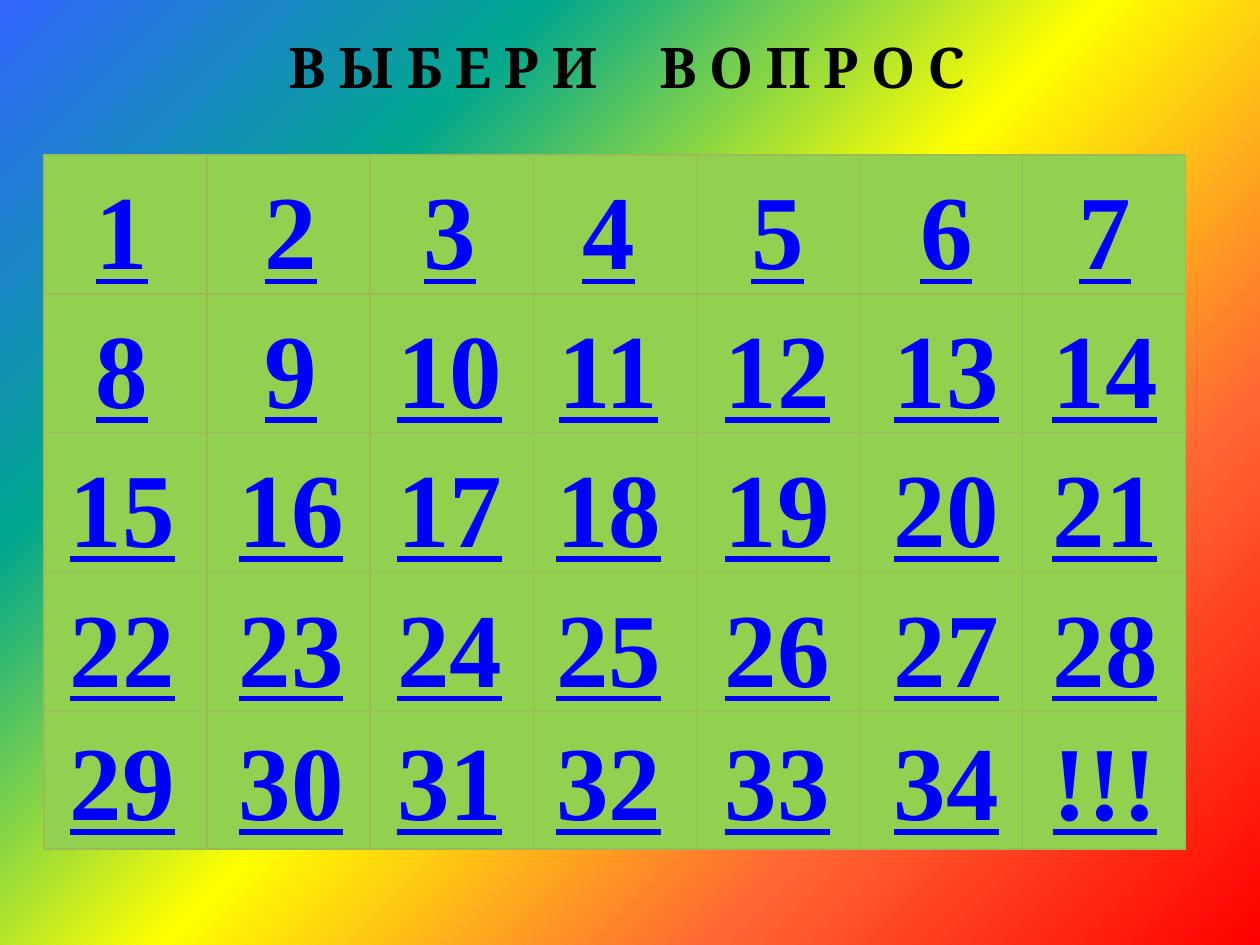
from dataclasses import dataclass

from pptx import Presentation
from pptx import oxml
from pptx import util as u
from pptx.dml.color import RGBColor
from pptx.enum import text
from pptx.oxml.ns import nsdecls


@dataclass(frozen=True)
class Theme:
    title_font: str = "Cambria"
    number_font: str = "Times New Roman"
    title_size: int = 32
    number_size: int = 60
    title_color: str = "000000"
    number_color: str = "0000FF"
    cell_fill: str = "92D050"
    cell_border: str = "9BBB59"
    border_width: int = 1
    background: tuple = ("FF0000", "FF6633", "FFFF00", "01A78F", "3366FF")


THEME = Theme()
COLUMNS, ROWS = 7, 5
QUESTIONS = [str(number) for number in range(1, COLUMNS * ROWS)] + ["!!!"]
COLUMN_CENTRES = (0.97, 2.31, 3.57, 4.83, 6.17, 7.51, 8.77)
ROW_TOPS = (1.26, 2.36, 3.46, 4.57, 5.63)
NUMBER_HEIGHT = 1.11
ONE_DIGIT_WIDTH, WIDE_WIDTH = 0.62, 1.04


def paint_background(slide):
    """Spread the rainbow in even steps from the bottom right corner."""
    step = 100000 // (len(THEME.background) - 1)
    stops = "".join(
        f'<a:gs pos="{index * step}"><a:srgbClr val="{color}"/></a:gs>'
        for index, color in enumerate(THEME.background)
    )
    background = oxml.parse_xml(
        f'<p:bg {nsdecls("p", "a")}><p:bgPr><a:gradFill rotWithShape="1">'
        f'<a:gsLst>{stops}</a:gsLst>'
        '<a:path path="circle"><a:fillToRect l="100000" t="100000"/></a:path>'
        '<a:tileRect r="-100000" b="-100000"/>'
        '</a:gradFill><a:effectLst/></p:bgPr></p:bg>'
    )
    slide.element.cSld.insert(0, background)


def format_line(shape, font_name, size, color):
    """Set one centred, bold, unwrapped line of text; return its font."""
    frame = shape.text_frame
    frame.word_wrap = False
    frame.auto_size = text.MSO_AUTO_SIZE.SHAPE_TO_FIT_TEXT
    frame.vertical_anchor = text.MSO_ANCHOR.TOP
    paragraph = frame.paragraphs[0]
    paragraph.alignment = text.PP_ALIGN.CENTER
    font = paragraph.font
    font.name = font_name
    font.size = u.Pt(size)
    font.bold = True
    font.color.rgb = RGBColor.from_string(color)
    return font


def add_title(slide, left, top, width, height):
    title = slide.shapes.title
    title.left, title.top = u.Inches(left), u.Inches(top)
    title.width, title.height = u.Inches(width), u.Inches(height)
    paragraph = title.text_frame.paragraphs[0]
    first, gap, second = [
        paragraph.add_run() for _ in range(3)
    ]
    first.text, gap.text, second.text = "В Ы Б Е Р И", " ", "В О П Р О С"
    gap.font._element.set("spc", "2800")  # widens the gap between the words
    format_line(title, THEME.title_font, THEME.title_size, THEME.title_color)


def add_borders(cell):
    properties = cell._tc.get_or_add_tcPr()
    for index, side in enumerate(("lnL", "lnR", "lnT", "lnB")):
        line = oxml.parse_xml(
            f'<a:{side} {nsdecls("a")} w="{u.Pt(THEME.border_width)}"><a:solidFill>'
            f'<a:srgbClr val="{THEME.cell_border}"/></a:solidFill></a:{side}>'
        )
        properties.insert(index, line)


def add_board(slide, left, top, width, height):
    table = slide.shapes.add_table(
        ROWS, COLUMNS, u.Inches(left), u.Inches(top), u.Inches(width), u.Inches(height)
    ).table
    table.first_row = table.horz_banding = False
    for cell in table.iter_cells():
        cell.fill.solid()
        cell.fill.fore_color.rgb = RGBColor.from_string(THEME.cell_fill)
        add_borders(cell)


def add_numbers(slide, centres, tops):
    group = slide.shapes.add_group_shape()
    places = [(centre, top) for top in tops for centre in centres]
    for question, (centre, top) in zip(QUESTIONS, places):
        width = ONE_DIGIT_WIDTH if len(question) == 1 else WIDE_WIDTH
        box = group.shapes.add_textbox(
            u.Inches(centre - width / 2), u.Inches(top),
            u.Inches(width), u.Inches(NUMBER_HEIGHT),
        )
        box.text_frame.text = question
        font = format_line(box, THEME.number_font, THEME.number_size, THEME.number_color)
        font.underline = True


def main():
    presentation = Presentation()
    presentation.slide_width, presentation.slide_height = u.Inches(10), u.Inches(7.5)
    slide = presentation.slides.add_slide(presentation.slide_layouts[5])
    paint_background(slide)
    add_title(slide, 1.85, 0.21, 6.25, 0.64)
    add_board(slide, 0.35, 1.23, 9.06, 5.51)
    add_numbers(slide, COLUMN_CENTRES, ROW_TOPS)
    presentation.save("out.pptx")


if __name__ == "__main__":
    main()
